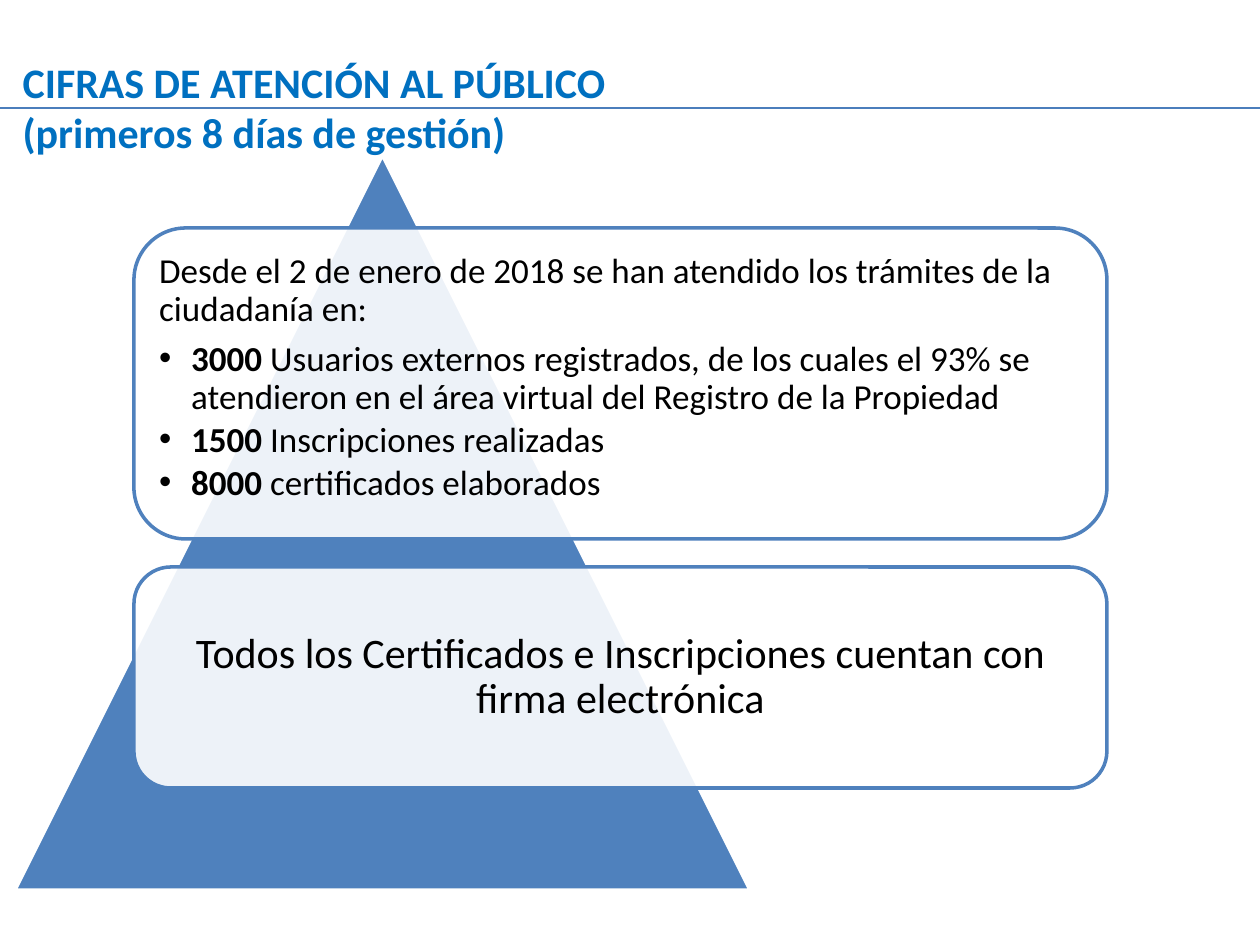
from lxml import etree
from pptx import Presentation
from pptx import util as u
from pptx.dml.color import RGBColor
from pptx.enum import shapes, text
from pptx.oxml.ns import qn

PX = u.Inches(1) / 126
FONT = "Calibri"
TITLE_BLUE = RGBColor(0x00, 0x70, 0xC0)
RULE_BLUE = RGBColor(0x4B, 0x7E, 0xBC)
BLUE = RGBColor(0x4F, 0x81, 0xBD)
WHITE = RGBColor(0xFF, 0xFF, 0xFF)
BLACK = RGBColor(0x00, 0x00, 0x00)

TITLE = "CIFRAS DE ATENCIÓN AL PÚBLICO\n(primeros 8 días de gestión)"
INTRO = "Desde el 2 de enero de 2018 se han atendido los trámites de la ciudadanía en:"
FIGURES = [
    ("3000", " Usuarios externos registrados, de los cuales el 93% se atendieron "
             "en el área virtual del Registro de la Propiedad"),
    ("1500", " Inscripciones realizadas"),
    ("8000", " certificados elaborados"),
]
SIGNATURE = "Todos los Certificados e Inscripciones cuentan con firma electrónica"

TITLE_BOX = (10, 50, 624, 115)
TRIANGLE_BOX = (15, 155, 735, 735)
FIGURES_BOX = (134, 228, 973, 311)
SIGNATURE_BOX = (134, 567, 973, 221)
RULE_Y = 108
BULLET_INDENT = 32


def px(n):
    return u.Emu(round(n * PX))


def add_shape(slide, kind, box, fill, line):
    sp = slide.shapes.add_shape(kind, *map(px, box))
    sp.shadow.inherit = False
    sp.fill.solid()
    sp.fill.fore_color.rgb = fill
    sp.line.color.rgb = line
    sp.line.width = u.Pt(2)
    return sp


def add_card(slide, box, inset, anchor):
    """Add a nearly opaque rounded box and return its text frame."""
    sp = add_shape(slide, shapes.MSO_SHAPE.ROUNDED_RECTANGLE, box, WHITE, BLUE)
    color = sp.fill._xPr.find(qn("a:solidFill"))[0]
    etree.SubElement(color, qn("a:alpha"), val="90000")
    tf = sp.text_frame
    tf.word_wrap = True
    tf.vertical_anchor = anchor
    tf.margin_left = tf.margin_right = tf.margin_top = tf.margin_bottom = px(inset)
    return tf


def write(p, parts, size, after, align=text.PP_ALIGN.LEFT):
    """Fill a paragraph with (text, bold) parts."""
    p.alignment = align
    p.line_spacing = 0.9
    p.space_after = u.Pt(after)
    for words, bold in parts:
        r = p.add_run()
        r.text = words
        style(r.font, size, BLACK, bold)


def style(font, size, color, bold):
    font.name, font.size, font.bold = FONT, u.Pt(size), bold
    font.color.rgb = color


def add_bullet(p):
    pPr = p._p.get_or_add_pPr()
    pPr.set("marL", str(px(BULLET_INDENT)))
    pPr.set("indent", str(-px(BULLET_INDENT)))
    etree.SubElement(pPr, qn("a:buFont"), typeface="Arial")
    etree.SubElement(pPr, qn("a:buChar"), char="•")


def main():
    prs = Presentation()
    prs.slide_width, prs.slide_height = px(1260), px(945)
    slide = prs.slides.add_slide(prs.slide_layouts[5])

    title = slide.shapes.title
    title.left, title.top, title.width, title.height = map(px, TITLE_BOX)
    tf = title.text_frame
    tf.text = TITLE
    tf.word_wrap = False
    tf.auto_size = text.MSO_AUTO_SIZE.NONE
    tf.vertical_anchor = text.MSO_ANCHOR.TOP
    for p in tf.paragraphs:
        p.alignment = text.PP_ALIGN.LEFT
        style(p.runs[0].font, 24, TITLE_BLUE, True)

    rule = slide.shapes.add_connector(
        shapes.MSO_CONNECTOR.STRAIGHT, 0, px(RULE_Y), prs.slide_width, px(RULE_Y))
    rule.line.color.rgb = RULE_BLUE
    rule.line.width = u.Pt(0.75)
    etree.SubElement(rule._element.spPr, qn("a:effectLst"))

    add_shape(slide, shapes.MSO_SHAPE.ISOSCELES_TRIANGLE, TRIANGLE_BOX, BLUE, WHITE)

    tf = add_card(slide, FIGURES_BOX, 10, text.MSO_ANCHOR.TOP)
    write(tf.paragraphs[0], [(INTRO, False)], 20, 7)
    for number, label in FIGURES:
        p = tf.add_paragraph()
        add_bullet(p)
        write(p, [(number, True), (label, False)], 20, 3)

    tf = add_card(slide, SIGNATURE_BOX, 13, text.MSO_ANCHOR.MIDDLE)
    write(tf.paragraphs[0], [(SIGNATURE, False)], 24, 8, text.PP_ALIGN.CENTER)

    prs.save("out.pptx")


if __name__ == "__main__":
    main()
